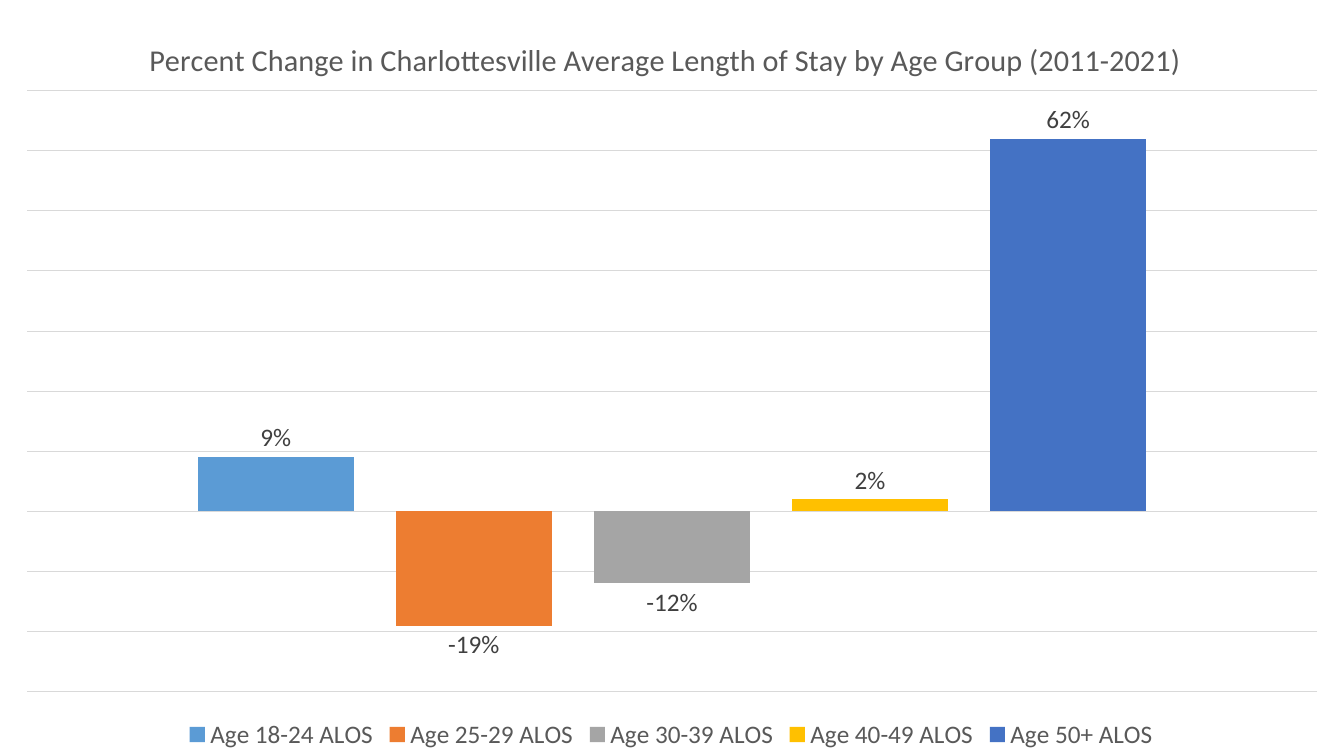
"""Build a slide with one column chart of the change in average length of stay."""
import pptx
import pptx.chart.data
import pptx.dml.color
import pptx.enum.chart
import pptx.oxml
import pptx.oxml.ns
import pptx.util

WIDTH, HEIGHT = 13.33, 7.5
TITLE = "Percent Change in Charlottesville Average Length of Stay by Age Group (2011-2021)"
AGE_GROUPS = [
    ("Age 18-24 ALOS", 0.09, "5B9BD5"),
    ("Age 25-29 ALOS", -0.19, "ED7D31"),
    ("Age 30-39 ALOS", -0.12, "A5A5A5"),
    ("Age 40-49 ALOS", 0.02, "FFC000"),
    ("Age 50+ ALOS", 0.62, "4472C4"),
]
TITLE_FONT = {"size": 21.6, "color": "595959"}
LEGEND_FONT = {"size": 18, "color": "595959"}
LABEL_FONT = {"size": 18, "color": "404040"}
VALUE_AXIS = {"minimum_scale": -0.3, "maximum_scale": 0.7, "major_unit": 0.1,
              "has_major_gridlines": True, "visible": False}
TITLE_PLACE = {"x": 0.107, "y": 0.043}
PLOT_PLACE = {"x": 0.02, "y": 0.12, "w": 0.96, "h": 0.795}
LEGEND_PLACE = {"x": 0.135, "y": 0.95}


def assign(target, values):
    """Set each named attribute of the target."""
    for name, value in values.items():
        setattr(target, name, value)


def rgb(code):
    """Turn a hex string into a colour."""
    return pptx.dml.color.RGBColor.from_string(code)


def set_font(font, style):
    """Apply a size and colour in the slide's typeface."""
    assign(font, {"name": "Calibri", "size": pptx.util.Pt(style["size"]), "bold": False})
    font.color.rgb = rgb(style["color"])


def place(element, index, shares, inner=False):
    """Give a chart part a manual layout in shares of the chart."""
    for old in element.findall(pptx.oxml.ns.qn("c:layout")):
        element.remove(old)
    target = '<c:layoutTarget val="inner"/>' if inner else ""
    modes = "".join(f'<c:{key}Mode val="edge"/>' for key in "xy")
    sizes = "".join(f'<c:{key} val="{share}"/>' for key, share in shares.items())
    element.insert(index, pptx.oxml.parse_xml(
        f'<c:layout {pptx.oxml.ns.nsdecls("c")}><c:manualLayout>'
        f"{target}{modes}{sizes}</c:manualLayout></c:layout>"))


def add_stay_chart(page, width, height):
    """Add the chart over the whole page."""
    data = pptx.chart.data.CategoryChartData(number_format="0%")
    data.categories = ["1"]
    for name, value, _ in AGE_GROUPS:
        data.add_series(name, [value])
    chart = page.shapes.add_chart(
        pptx.enum.chart.XL_CHART_TYPE.COLUMN_CLUSTERED, 0, 0, width, height, data).chart
    set_font(chart.font, LEGEND_FONT)

    chart.has_title = True
    para = chart.chart_title.text_frame.paragraphs[0]
    span = para.add_run()
    span.text = TITLE
    set_font(span.font, TITLE_FONT)

    chart.has_legend = True
    assign(chart.legend, {"position": pptx.enum.chart.XL_LEGEND_POSITION.BOTTOM,
                          "include_in_layout": False})
    set_font(chart.legend.font, LEGEND_FONT)

    chart.category_axis.visible = False
    assign(chart.value_axis, VALUE_AXIS)
    chart.value_axis.tick_labels.number_format = "0%"
    grid = chart.value_axis.major_gridlines.format.line
    grid.width = pptx.util.Pt(0.75)
    grid.color.rgb = rgb("D9D9D9")

    plot = chart.plots[0]
    assign(plot, {"gap_width": 219, "overlap": -27, "vary_by_categories": False})
    for series, (_, _, color) in zip(plot.series, AGE_GROUPS):
        series.invert_if_negative = False
        series.format.fill.solid()
        series.format.fill.fore_color.rgb = rgb(color)
        labels = series.data_labels
        assign(labels, {"show_value": True, "number_format": "0%",
                        "number_format_is_linked": False,
                        "position": pptx.enum.chart.XL_LABEL_POSITION.OUTSIDE_END})
        set_font(labels.font, LABEL_FONT)

    place(chart.chart_title._element, 1, TITLE_PLACE)
    place(chart.legend._element, 1, LEGEND_PLACE)
    place(chart._chartSpace.chart.plotArea, 0, PLOT_PLACE, inner=True)


def main():
    """Make the deck and save it."""
    deck = pptx.Presentation()
    assign(deck, {"slide_width": pptx.util.Inches(WIDTH),
                  "slide_height": pptx.util.Inches(HEIGHT)})
    page = deck.slides.add_slide(deck.slide_layouts[6])
    add_stay_chart(page, deck.slide_width, deck.slide_height)
    deck.save("out.pptx")


if __name__ == "__main__":
    main()
